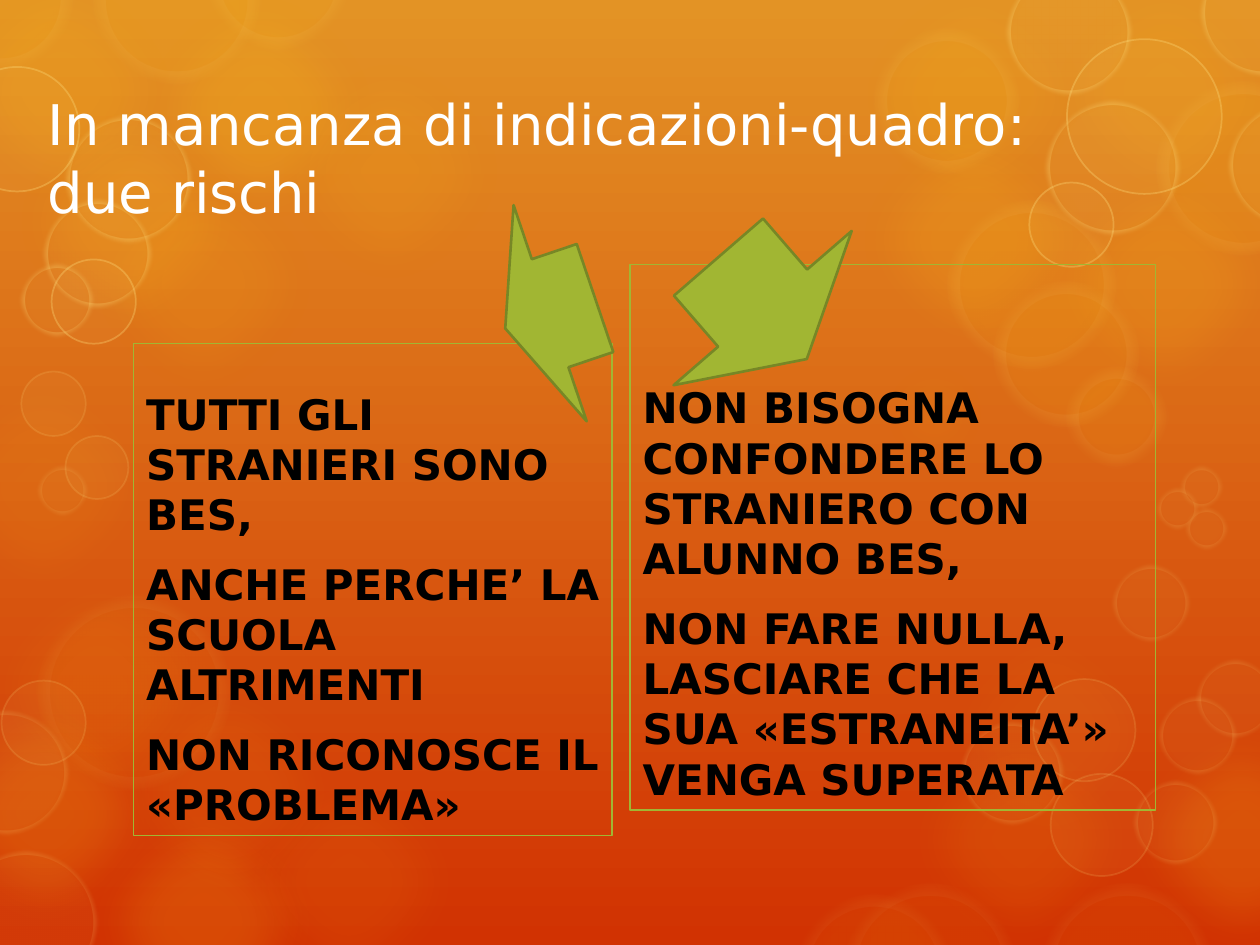
from lxml import etree
from pptx import Presentation
from pptx import util as u
from pptx.dml.color import RGBColor
from pptx.enum import shapes, text
from pptx.oxml import ns

FONT = "DejaVu Sans"
COLORS = {
    "top": "E39325", "bottom": "D13202", "gold": "FDC61B", "pale": "FFE281",
    "cream": "FEEBAE", "green": "A1B633", "dark_green": "778726",
    "white": "FFFFFF", "black": "000000",
}

# Content: lengths in cm
TITLE = "In mancanza di indicazioni-quadro: due rischi"
TITLE_BOX = (0.71, 1.88, 21.89, 2.57)
RISKS = [  # placeholder index, box, paragraphs
    (1, (2.69, 6.93, 9.65, 9.91), [
        "TUTTI GLI STRANIERI SONO BES,",
        "ANCHE PERCHE’ LA SCUOLA ALTRIMENTI",
        "NON RICONOSCE IL «PROBLEMA»"]),
    (3, (12.7, 5.33, 10.59, 11), [
        "NON BISOGNA CONFONDERE LO STRANIERO CON ALUNNO BES,",
        "NON FARE NULLA, LASCIARE CHE LA SUA «ESTRANEITA’» VENGA SUPERATA"]),
]
ARROWS = [  # box, rotation
    ((8.79, 5.36, 4.6, 1.91), 71.3),
    ((13, 4.85, 4.75, 2.72), 319.1),
]

# Soft blobs: left, top, opacity %
BLOB_SIZE = 5.3
BLOBS = [
    (-0.66, 11.23, 8), (1.45, 3.05, 10), (5.21, 0.79, 10), (1.45, 15.93, 16),
    (-1.42, -0.81, 14), (2.57, -0.46, 20), (0, 1.83, 15), (20.83, -0.81, 10),
    (16.99, -0.74, 10), (20.83, 3.05, 15), (22.38, 14.27, 16),
    (18.52, 12.12, 5), (-1.75, 13.74, 16), (1.96, 13.31, 8),
    (16.99, 2.18, 15), (17.93, 14.27, 10), (4.39, 15.14, 8),
    (-1.78, 7.16, 8), (17.15, 6.65, 10),
]
# Rings: (fill, opacity), (line, points, opacity), soft edge in points,
# then left, top, diameter of each
RINGS = [
    (("gold", 10), ("cream", 14, 6), 8, [
        (23.32, 1.65, 3.48), (17.63, 0.58, 2.9), (19.1, 4.04, 3.38),
        (20.04, 5.69, 2.9), (21.51, 7.39, 2.01), (1.9, -1.65, 3.33),
        (4.17, -1.88, 2.87), (-1.42, -1.45, 2.87)]),
    (("gold", 6), ("cream", 14, 4), 8, [
        (0.76, 12.01, 3.89), (16.05, 18.03, 3.15), (17, 17.81, 3.48),
        (21.01, 17.81, 3.43)]),
    (("pale", 5), ("pale", 5, 15), 3, [
        (-0.91, 17.15, 2.87), (-1.12, 14.33, 2.49), (19.38, 14.55, 2.06),
        (22.86, 15.75, 1.68), (22.43, 11.38, 1.55), (23.37, 14.05, 1.55),
        (24.13, 13.31, 1.55), (23.8, 9.4, 0.84), (23.32, 9.83, 0.84),
        (23.9, 10.24, 0.84), (0.76, 9.4, 0.99)]),
    (("pale", 5), ("pale", 5, 30), 3, [
        (1.32, 2.34, 2.54), (0.89, 4.04, 2.16), (0.43, 5.33, 1.45),
        (20.29, -0.61, 2.51), (24.21, -0.99, 2.51), (24.77, 2.08, 2.51),
        (21.08, 2.03, 2.69)]),
    (("pale", 5), ("pale", 1, 15), 0, [
        (0.03, 13.72, 1.7), (21.18, 15.6, 2.06), (20.83, 13.69, 2.06),
        (0.43, 7.49, 1.3), (1.32, 8.79, 1.27)]),
    (("pale", 5), ("pale", 1, 30), 0, [
        (-0.91, 1.35, 2.51), (1.04, 5.23, 1.7), (21.51, 0.79, 3.12),
        (20.75, 3.68, 1.7)]),
]


def rgb(name):
    return RGBColor.from_string(COLORS[name])


def paint(fill, color, opacity=100):
    fill.solid()
    fill.fore_color.rgb = rgb(color)
    if opacity < 100:
        solid = fill._xPr.find(ns.qn("a:solidFill"))
        etree.SubElement(solid[0], ns.qn("a:alpha"), val=str(opacity * 1000))


def place(shape, box):
    shape.left, shape.top, shape.width, shape.height = map(u.Cm, box)


def add_shape(slide, kind, box):
    shape = slide.shapes.add_shape(kind, *map(u.Cm, box))
    shape.shadow.inherit = False
    return shape


def add_bubble(slide, left, top, size, fill, line, soft):
    bubble = add_shape(slide, shapes.MSO_SHAPE.OVAL, (left, top, size, size))
    paint(bubble.fill, *fill)
    if line:
        color, width, opacity = line
        paint(bubble.line.fill, color, opacity)
        bubble.line.width = u.Pt(width)
    else:
        bubble.line.fill.background()
    if soft:
        effects = bubble._element.spPr.find(ns.qn("a:effectLst"))
        etree.SubElement(effects, ns.qn("a:softEdge"), rad=str(u.Pt(soft)))


def write(shape, lines, size, color, bold):
    frame = shape.text_frame
    frame.text = "\n".join(lines)
    frame.word_wrap = True
    for paragraph in frame.paragraphs:
        paragraph.alignment = text.PP_ALIGN.LEFT
        font = paragraph.font
        font.name, font.size, font.bold = FONT, u.Pt(size), bold
        font.color.rgb = rgb(color)
    return frame


def main():
    presentation = Presentation()
    presentation.slide_width, presentation.slide_height = u.Cm(25.4), u.Cm(19.05)
    slide = presentation.slides.add_slide(presentation.slide_layouts[4])
    placeholders = {p.placeholder_format.idx: p for p in slide.placeholders}

    # Background gradient and bubbles
    background = slide.background.fill
    background.gradient()
    background.gradient_angle = 270
    for stop, name, position in zip(background.gradient_stops, ("top", "bottom"), (0, 1)):
        stop.color.rgb = rgb(name)
        stop.position = position
    for left, top, opacity in BLOBS:
        size = 3.38 if (left, top) == (17.15, 6.65) else BLOB_SIZE
        add_bubble(slide, left, top, size, ("gold", opacity), None, 25)
    for fill, line, soft, circles in RINGS:
        for circle in circles:
            add_bubble(slide, *circle, fill, line, soft)

    # Placeholders go in front of the bubbles; unused ones go away
    for index, placeholder in placeholders.items():
        tree = placeholder._element.getparent()
        tree.remove(placeholder._element)
        if index in (0, 1, 3):
            tree.append(placeholder._element)

    # Title
    title = placeholders[0]
    place(title, TITLE_BOX)
    frame = write(title, [TITLE], 32, "white", False)
    frame.vertical_anchor = text.MSO_ANCHOR.MIDDLE

    # The two risks
    for index, box, lines in RISKS:
        body = placeholders[index]
        place(body, box)
        body.line.color.rgb = rgb("green")
        body.line.width = u.Pt(0.75)
        frame = write(body, lines, 24, "black", True)
        frame.vertical_anchor = text.MSO_ANCHOR.BOTTOM
        for paragraph in frame.paragraphs:
            paragraph.space_after = u.Pt(6)

    # Arrows
    for box, rotation in ARROWS:
        arrow = add_shape(slide, shapes.MSO_SHAPE.DOWN_ARROW, box)
        arrow.rotation = rotation
        paint(arrow.fill, "green")
        paint(arrow.line.fill, "dark_green")
        arrow.line.width = u.Pt(1.5)

    presentation.save("out.pptx")


if __name__ == "__main__":
    main()
